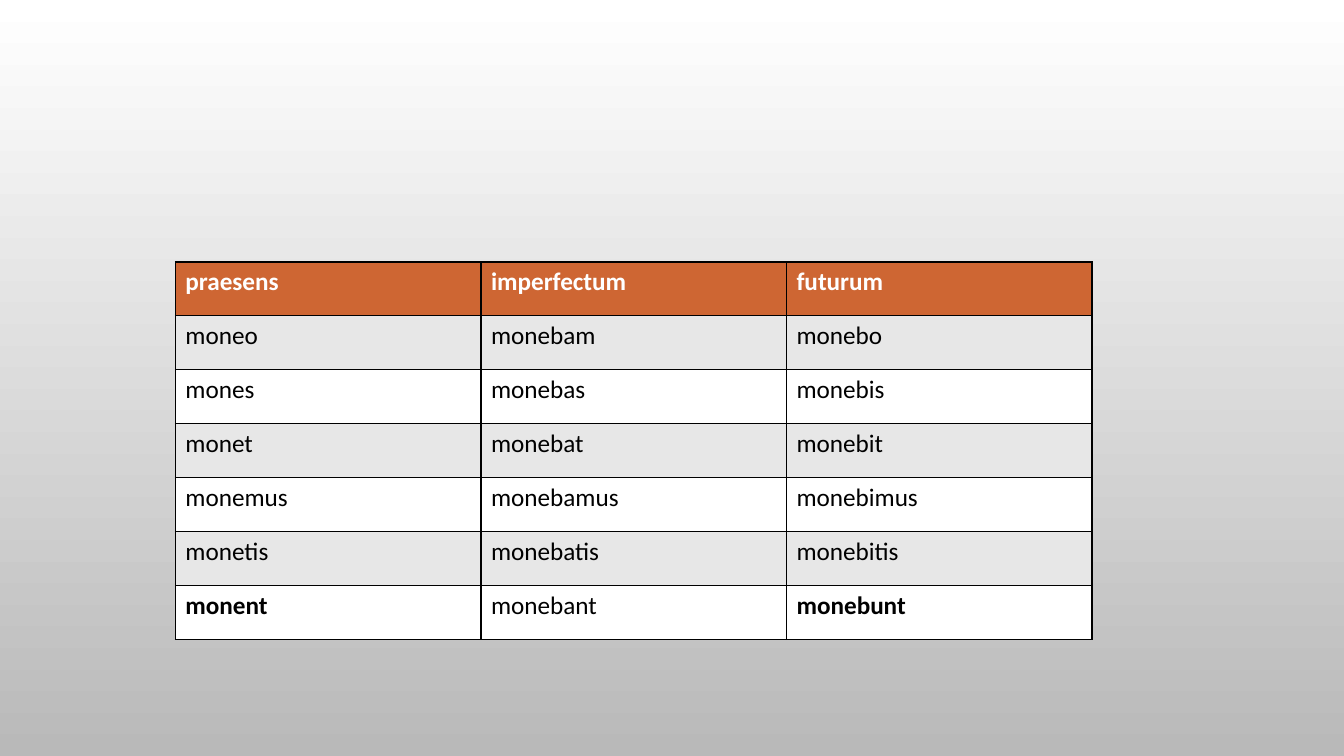
from lxml import etree
from pptx import Presentation
from pptx.dml.color import RGBColor
from pptx.oxml.ns import qn
from pptx.util import Cm, Pt

WHITE = RGBColor(0xFF, 0xFF, 0xFF)
BLACK = RGBColor(0x00, 0x00, 0x00)
ORANGE = RGBColor(0xCE, 0x66, 0x33)
LIGHT_GREY = RGBColor(0xE7, 0xE7, 0xE7)
MID_GREY = RGBColor(0xB9, 0xB9, 0xB9)

BLANK_LAYOUT = 6
COLUMN_WIDTH = Cm(7.7)
ROW_HEIGHT = Cm(1.36)

CONJUGATION = [
    ("praesens", "imperfectum", "futurum"),
    ("moneo", "monebam", "monebo"),
    ("mones", "monebas", "monebis"),
    ("monet", "monebat", "monebit"),
    ("monemus", "monebamus", "monebimus"),
    ("monetis", "monebatis", "monebitis"),
    ("monent", "monebant", "monebunt"),
]
EMPHASISED = {"monent", "monebunt"}


def set_background(slide, top_color, bottom_color):
    fill = slide.background.fill
    fill.gradient()
    fill.gradient_angle = 270
    for stop, color in zip(fill.gradient_stops, (top_color, bottom_color)):
        stop.color.rgb = color


def add_borders(cell, color, width):
    properties = cell._tc.get_or_add_tcPr()
    for side in ("a:lnL", "a:lnR", "a:lnT", "a:lnB"):
        line = etree.SubElement(properties, qn(side), w=str(width))
        solid_fill = etree.SubElement(line, qn("a:solidFill"))
        etree.SubElement(solid_fill, qn("a:srgbClr"), val=str(color))


def format_cell(cell, text, fill_color, font_color, bold):
    add_borders(cell, BLACK, Pt(1))
    cell.fill.solid()
    cell.fill.fore_color.rgb = fill_color
    cell.text = text
    font = cell.text_frame.paragraphs[0].font
    font.name = "Calibri"
    font.size = Pt(18)
    font.bold = bold
    font.color.rgb = font_color


def add_verb_table(slide, rows, left, top):
    column_count = len(rows[0])
    table = slide.shapes.add_table(
        len(rows), column_count, left, top,
        COLUMN_WIDTH * column_count, ROW_HEIGHT * len(rows),
    ).table
    for column in table.columns:
        column.width = COLUMN_WIDTH
    for row_index, words in enumerate(rows):
        table.rows[row_index].height = ROW_HEIGHT
        is_header = row_index == 0
        band_color = LIGHT_GREY if row_index % 2 else WHITE
        for column_index, word in enumerate(words):
            format_cell(
                table.cell(row_index, column_index), word,
                ORANGE if is_header else band_color,
                WHITE if is_header else BLACK,
                is_header or word in EMPHASISED,
            )


def main():
    presentation = Presentation()
    presentation.slide_width = Cm(33.87)
    presentation.slide_height = Cm(19.05)
    slide = presentation.slides.add_slide(presentation.slide_layouts[BLANK_LAYOUT])

    # Grey gradient behind the table
    set_background(slide, WHITE, MID_GREY)

    # Conjugation of the verb in three tenses
    add_verb_table(slide, CONJUGATION, Cm(4.42), Cm(6.6))

    presentation.save("out.pptx")


if __name__ == "__main__":
    main()
